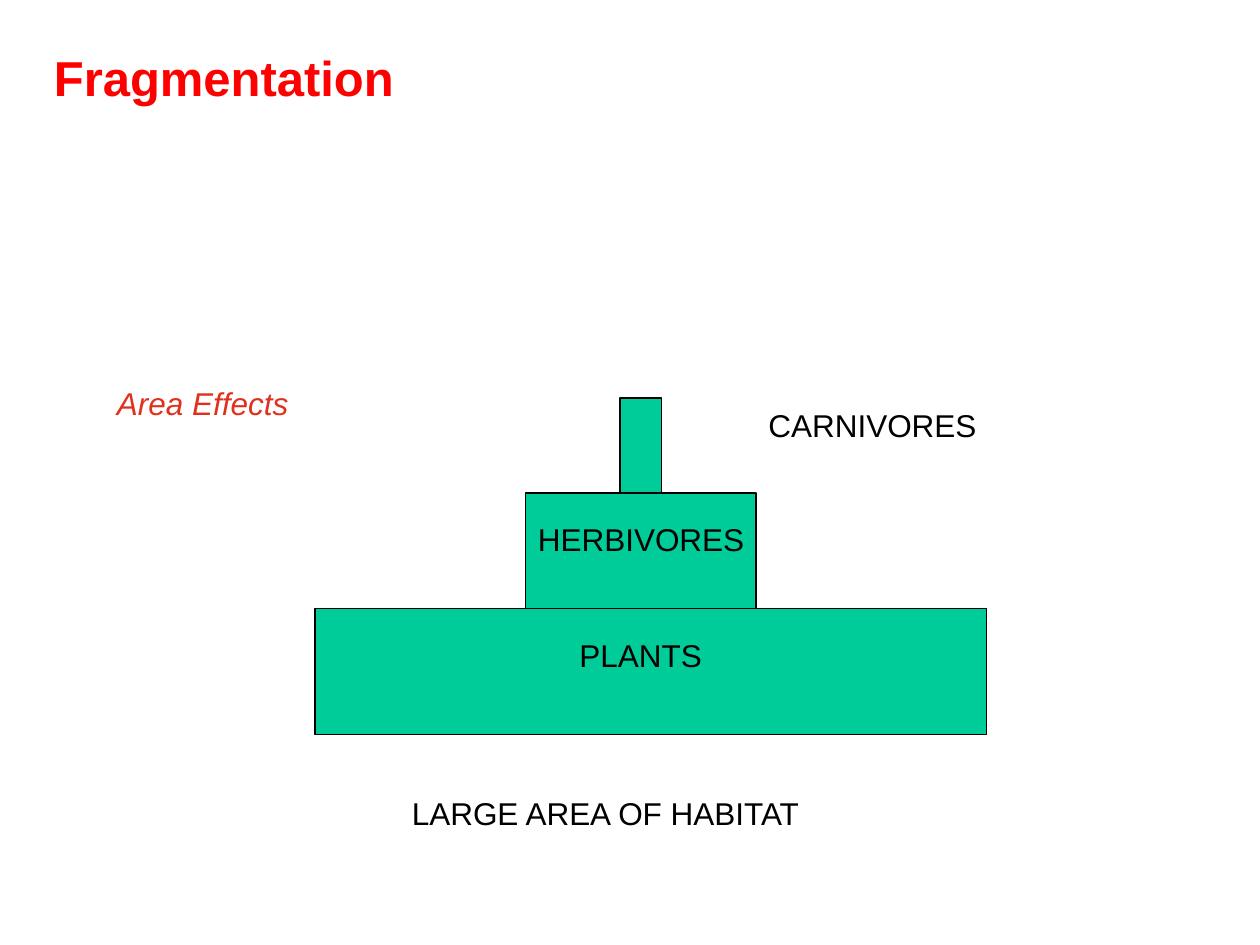
from pptx import Presentation
from pptx.dml.color import RGBColor
from pptx.enum.shapes import MSO_SHAPE
from pptx.util import Inches, Pt


def color(hex_string):
    return RGBColor.from_string(hex_string)


presentation = Presentation()
presentation.slide_width = Inches(10)
presentation.slide_height = Inches(7.5)
slide = presentation.slides.add_slide(presentation.slide_layouts[6])

# Trophic pyramid, stacked upwards from the plants: left, width, height
levels = [(2.5, 5.33, 1), (4.17, 1.83, 0.92), (4.92, 0.33, 0.75)]
level_top = 5.83
for left, width, height in levels:
    level_top -= height
    shape = slide.shapes.add_shape(
        MSO_SHAPE.RECTANGLE, Inches(left), Inches(level_top), Inches(width), Inches(height)
    )
    shape.shadow.inherit = False
    shape.fill.solid()
    shape.fill.fore_color.rgb = color("00CC99")
    shape.line.color.rgb = color("000000")
    shape.line.width = Pt(1)

# Text: left, top, width, wording, color and font format
label_format = {"size": Pt(18)}
texts = [
    (4.5, 5, 2.67, "PLANTS", "000000", label_format),
    (4.17, 4.08, 3.25, "HERBIVORES", "000000", label_format),
    (6, 3.17, 3, "CARNIVORES", "000000", label_format),
    (3.17, 6.25, 5.33, "LARGE AREA OF HABITAT", "000000", label_format),
    (0.83, 3, 3.5, "Area Effects", "E0311F", {"size": Pt(18), "italic": True}),
    (0.33, 0.33, 6.5, "Fragmentation", "FF0000", {"size": Pt(28), "bold": True}),
]
for left, top, width, wording, text_color, font_format in texts:
    text_box = slide.shapes.add_textbox(Inches(left), Inches(top), Inches(width), Inches(0.57))
    text_box.text_frame.word_wrap = True
    paragraph = text_box.text_frame.paragraphs[0]
    run = paragraph.add_run()
    run.text = wording
    run.font.name = "Arial"
    run.font.color.rgb = color(text_color)
    for attribute, value in font_format.items():
        setattr(run.font, attribute, value)

presentation.save("out.pptx")
